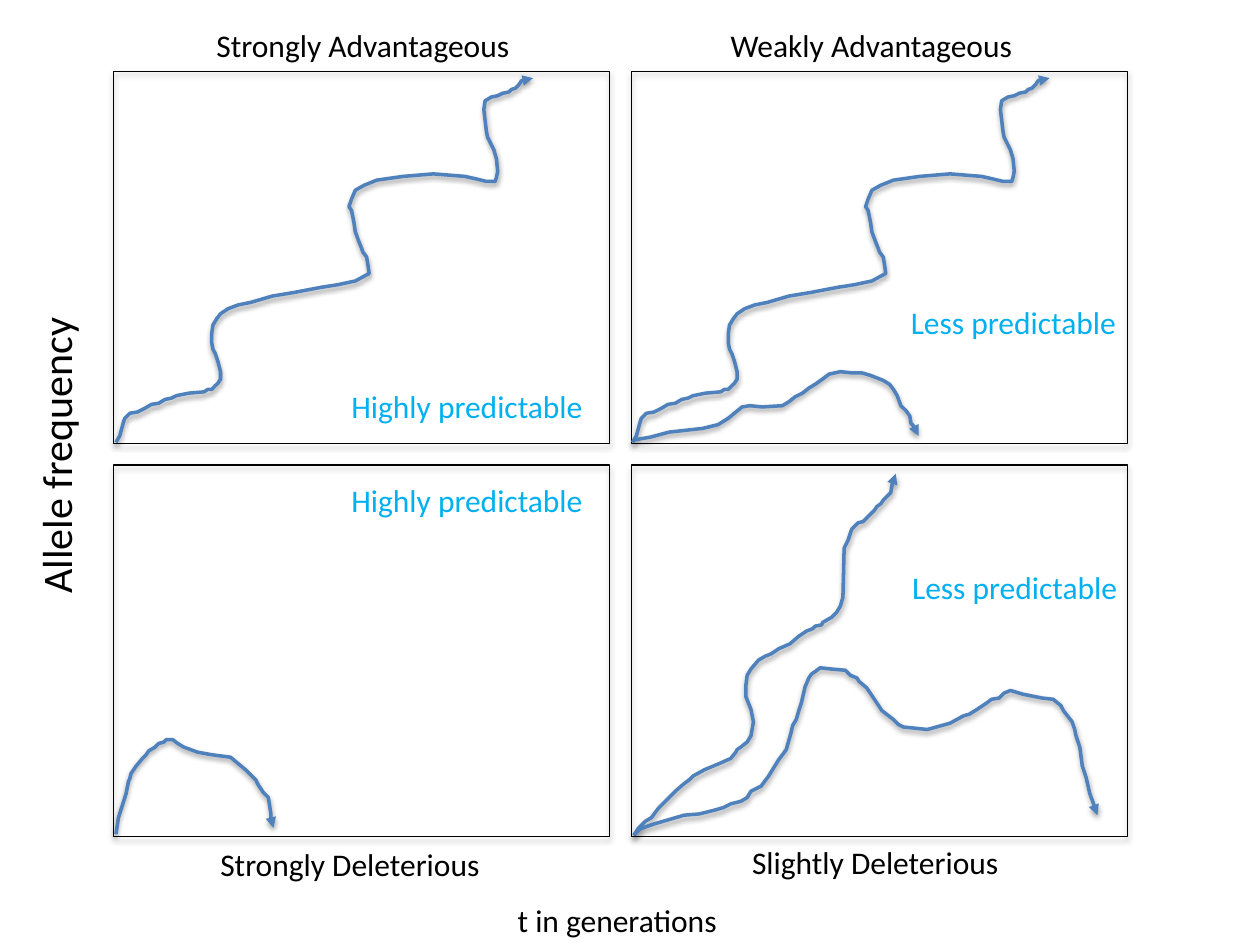
"""Build a slide of four panels sketching allele frequency over generations."""
from typing import NamedTuple

from lxml import etree
from pptx import Presentation
from pptx.dml.color import RGBColor
from pptx.enum.shapes import MSO_SHAPE
from pptx.enum.text import MSO_AUTO_SIZE
from pptx.oxml.ns import qn
from pptx.util import Inches, Pt

RECTANGLE = MSO_SHAPE.RECTANGLE
FIT_SHAPE = MSO_AUTO_SIZE.SHAPE_TO_FIT_TEXT
FONT = "Calibri"
COLORS = {"ink": "000000", "curve": "4F81BD", "note": "00B0F0"}
PANEL_LEFTS = (0.9, 5.01)
PANEL_TOPS = (0.57, 3.69)
PANEL_W, PANEL_H = 3.94, 2.95


class Label(NamedTuple):
    text: str
    left: float
    top: float
    width: float
    color: str = "ink"
    size: int = 18
    height: float = 0.4
    rotation: int = 0


class Curve(NamedTuple):
    points: tuple
    shift: float = 0


CLIMB = (
    (0.92, 3.51), (0.95, 3.46), (0.98, 3.35), (0.99, 3.32), (1.03, 3.28),
    (1.09, 3.27), (1.15, 3.24), (1.2, 3.21), (1.26, 3.2), (1.31, 3.17),
    (1.36, 3.16), (1.4, 3.14), (1.5, 3.12), (1.62, 3.11), (1.65, 3.09),
    (1.68, 3.09), (1.71, 3.06), (1.73, 3.04), (1.75, 3.01), (1.75, 2.95),
    (1.73, 2.87), (1.71, 2.81), (1.69, 2.77), (1.68, 2.72), (1.68, 2.65),
    (1.69, 2.58), (1.72, 2.53), (1.75, 2.49), (1.81, 2.45), (1.89, 2.42),
    (1.99, 2.4), (2.16, 2.35), (2.34, 2.32), (2.55, 2.28), (2.68, 2.26),
    (2.82, 2.23), (2.93, 2.17), (2.92, 2.1), (2.91, 2.04), (2.88, 2),
    (2.87, 1.97), (2.85, 1.92), (2.82, 1.84), (2.81, 1.77), (2.79, 1.67),
    (2.77, 1.64), (2.79, 1.58), (2.82, 1.51), (2.89, 1.47), (2.99, 1.43),
    (3.2, 1.4), (3.44, 1.38), (3.69, 1.4), (3.78, 1.42), (3.86, 1.44),
    (3.93, 1.44), (3.94, 1.41), (3.95, 1.36), (3.94, 1.26), (3.92, 1.19),
    (3.87, 1.09), (3.86, 1.04), (3.84, 0.87), (3.85, 0.8), (3.9, 0.77),
    (3.95, 0.76), (3.99, 0.74), (4.04, 0.73), (4.06, 0.71), (4.09, 0.7),
    (4.12, 0.67), (4.14, 0.64), (4.2, 0.63), (4.23, 0.62),
)
WEAK_LOSS = (
    (5.04, 3.49), (5.16, 3.47), (5.31, 3.43), (5.4, 3.42), (5.58, 3.4),
    (5.7, 3.37), (5.78, 3.32), (5.84, 3.27), (5.89, 3.23), (5.95, 3.22),
    (6.05, 3.23), (6.21, 3.22), (6.26, 3.19), (6.31, 3.15), (6.37, 3.12),
    (6.42, 3.08), (6.47, 3.05), (6.54, 3), (6.58, 2.97), (6.67, 2.95),
    (6.76, 2.96), (6.84, 2.96), (6.91, 2.98), (7.01, 3.02), (7.06, 3.05),
    (7.09, 3.09), (7.12, 3.14), (7.15, 3.22), (7.19, 3.26), (7.22, 3.3),
    (7.23, 3.36), (7.25, 3.38), (7.27, 3.42), (7.29, 3.46),
)
SLIGHT_RISE = (
    (5.03, 6.63), (5.07, 6.57), (5.12, 6.52), (5.17, 6.49), (5.2, 6.45),
    (5.23, 6.41), (5.29, 6.35), (5.36, 6.28), (5.43, 6.22), (5.47, 6.19),
    (5.5, 6.16), (5.59, 6.11), (5.71, 6.06), (5.8, 6.02), (5.84, 5.97),
    (5.85, 5.95), (5.88, 5.93), (5.93, 5.89), (5.96, 5.84), (5.98, 5.73),
    (5.96, 5.63), (5.92, 5.53), (5.92, 5.44), (5.93, 5.36), (5.96, 5.31),
    (6.02, 5.24), (6.07, 5.21), (6.12, 5.19), (6.18, 5.15), (6.27, 5.11),
    (6.34, 5.05), (6.4, 5.01), (6.45, 4.99), (6.47, 4.97), (6.52, 4.96),
    (6.53, 4.94), (6.6, 4.9), (6.64, 4.86), (6.67, 4.81), (6.69, 4.74),
    (6.7, 4.35), (6.73, 4.29), (6.76, 4.2), (6.81, 4.15), (6.85, 4.14),
    (6.94, 4.05), (6.96, 4.02), (6.99, 4), (7.01, 3.97), (7.07, 3.91),
    (7.08, 3.85), (7.1, 3.77), (7.11, 3.76),
)
SLIGHT_LOSS = (
    (5.04, 6.62), (5.08, 6.58), (5.13, 6.56), (5.19, 6.54), (5.43, 6.47),
    (5.55, 6.46), (5.67, 6.43), (5.74, 6.41), (5.8, 6.38), (5.88, 6.36),
    (5.93, 6.33), (5.96, 6.28), (6.04, 6.24), (6.1, 6.16), (6.18, 6.03),
    (6.24, 5.95), (6.28, 5.81), (6.29, 5.76), (6.32, 5.71), (6.34, 5.64),
    (6.36, 5.58), (6.39, 5.45), (6.42, 5.38), (6.44, 5.35), (6.47, 5.33),
    (6.51, 5.3), (6.6, 5.31), (6.71, 5.32), (6.75, 5.36), (6.8, 5.38),
    (6.82, 5.41), (6.88, 5.46), (6.94, 5.55), (7, 5.64), (7.09, 5.71),
    (7.13, 5.75), (7.17, 5.77), (7.36, 5.79), (7.54, 5.74), (7.65, 5.68),
    (7.69, 5.67), (7.74, 5.64), (7.77, 5.62), (7.83, 5.58), (7.87, 5.55),
    (7.93, 5.54), (7.97, 5.5), (8.02, 5.48), (8.12, 5.51), (8.27, 5.54),
    (8.36, 5.55), (8.42, 5.6), (8.44, 5.64), (8.51, 5.73), (8.53, 5.79),
    (8.54, 5.84), (8.57, 5.93), (8.59, 6.08), (8.62, 6.17), (8.65, 6.3),
    (8.68, 6.38), (8.69, 6.44), (8.71, 6.47),
)
STRONG_LOSS = (
    (0.92, 6.62), (0.94, 6.49), (1, 6.3), (1.02, 6.2), (1.03, 6.18),
    (1.04, 6.14), (1.08, 6.08), (1.13, 6.02), (1.16, 5.99), (1.18, 5.96),
    (1.23, 5.93), (1.26, 5.9), (1.3, 5.89), (1.32, 5.87), (1.37, 5.87),
    (1.41, 5.9), (1.46, 5.93), (1.57, 5.97), (1.68, 5.99), (1.83, 6.01),
    (1.89, 6.06), (1.95, 6.11), (1.98, 6.14), (2.03, 6.19), (2.05, 6.23),
    (2.09, 6.29), (2.13, 6.33), (2.15, 6.46), (2.15, 6.52), (2.17, 6.57),
)
CURVES = (
    Curve(CLIMB),
    Curve(CLIMB, 4.1),
    Curve(WEAK_LOSS),
    Curve(SLIGHT_RISE),
    Curve(SLIGHT_LOSS),
    Curve(STRONG_LOSS),
)
LABELS = (
    Label("Strongly Advantageous", 1.62, 0.16, 2.57),
    Label("Weakly Advantageous", 5.7, 0.16, 2.48),
    Label("Slightly Deleterious", 5.87, 6.64, 2.18),
    Label("Strongly Deleterious", 1.65, 6.66, 2.29),
    Label("Allele frequency", -0.77, 3.35, 2.42, size=24, height=0.5, rotation=270),
    Label("t in generations", 4.01, 7.1, 1.85),
    Label("Highly predictable", 2.69, 3.02, 2.06, "note"),
    Label("Highly predictable", 2.69, 3.77, 2.06, "note"),
    Label("Less predictable", 7.13, 2.36, 1.85, "note"),
    Label("Less predictable", 7.14, 4.46, 1.85, "note"),
)


def style_outline(sp, color: str, width: float, distance: float, alpha: int) -> None:
    sp.fill.background()
    sp.line.color.rgb = RGBColor.from_string(COLORS[color])
    sp.line.width = Pt(width)
    sp.shadow.inherit = False
    effects = sp._element.spPr.find(qn("a:effectLst"))
    shadow = etree.SubElement(
        effects, qn("a:outerShdw"), blurRad=str(Pt(3.1)), dist=str(Pt(distance)),
        dir="5400000", rotWithShape="0",
    )
    shade = etree.SubElement(shadow, qn("a:srgbClr"), val=COLORS["ink"])
    etree.SubElement(shade, qn("a:alpha"), val=str(alpha * 1000))


def add_panel(shapes, left: float, top: float) -> None:
    sp = shapes.add_shape(
        RECTANGLE, Inches(left), Inches(top), Inches(PANEL_W), Inches(PANEL_H)
    )
    style_outline(sp, "ink", 0.75, 1.8, 35)


def add_curve(shapes, curve: Curve) -> None:
    start, *rest = [(Inches(x + curve.shift), Inches(y)) for x, y in curve.points]
    builder = shapes.build_freeform(*start)
    builder.add_line_segments(rest, close=False)
    sp = builder.convert_to_shape()
    style_outline(sp, "curve", 2, 1.6, 38)
    ln = sp._element.spPr.find(qn("a:ln"))
    etree.SubElement(ln, qn("a:round"))
    etree.SubElement(ln, qn("a:tailEnd"), type="triangle")


def add_label(shapes, label: Label) -> None:
    sp = shapes.add_textbox(
        Inches(label.left), Inches(label.top), Inches(label.width), Inches(label.height)
    )
    sp.rotation = label.rotation
    tf = sp.text_frame
    tf.word_wrap = False
    tf.auto_size = FIT_SHAPE
    p = tf.paragraphs[0]
    p.text = label.text
    p.font.name = FONT
    p.font.size = Pt(label.size)
    p.font.color.rgb = RGBColor.from_string(COLORS[label.color])


def main() -> None:
    prs = Presentation()
    prs.slide_width, prs.slide_height = Inches(10), Inches(7.5)
    shapes = prs.slides.add_slide(prs.slide_layouts[6]).shapes
    for top in PANEL_TOPS:
        for left in PANEL_LEFTS:
            add_panel(shapes, left, top)
    for curve in CURVES:
        add_curve(shapes, curve)
    for label in LABELS:
        add_label(shapes, label)
    prs.save("out.pptx")


if __name__ == "__main__":
    main()
